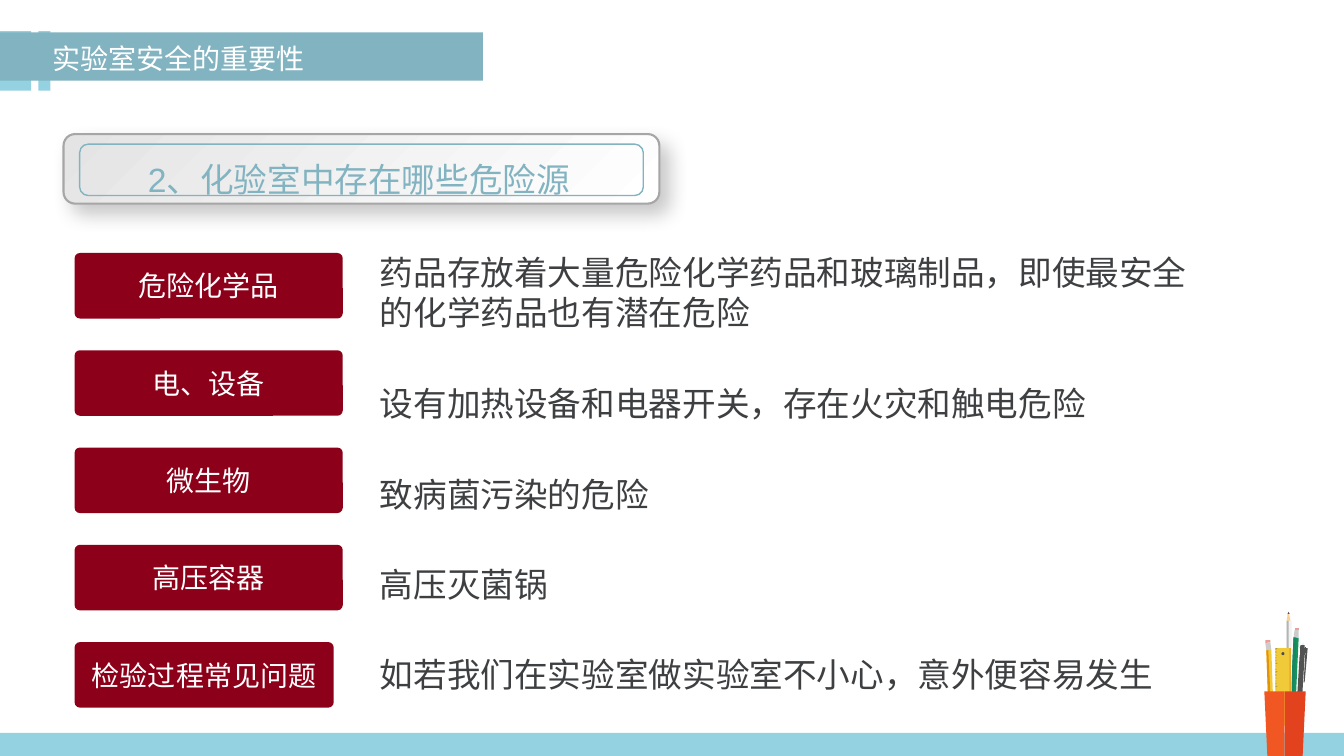
import pptx
import pptx.util
import pptx.dml.color
import pptx.enum.shapes
import pptx.enum.text
import pptx.oxml
import pptx.oxml.ns

Inches = pptx.util.Inches
Pt = pptx.util.Pt
RGBColor = pptx.dml.color.RGBColor
MSO_SHAPE = pptx.enum.shapes.MSO_SHAPE
PP_ALIGN = pptx.enum.text.PP_ALIGN
MSO_ANCHOR = pptx.enum.text.MSO_ANCHOR

SKY = RGBColor(0x94, 0xD2, 0xE1)
TEAL = RGBColor(0x82, 0xB3, 0xC1)
CRIMSON = RGBColor(0x8D, 0x00, 0x1A)
WHITE = RGBColor(0xFF, 0xFF, 0xFF)
INK = RGBColor(0x3D, 0x3F, 0x41)
CARD_GRAY = RGBColor(0xE4, 0xE4, 0xE4)
CARD_EDGE = RGBColor(0xA6, 0xA6, 0xA6)
GREEN = RGBColor(0x13, 0x95, 0x5C)
DARK_GREEN = RGBColor(0x1A, 0x87, 0x63)
YELLOW = RGBColor(0xF1, 0xCA, 0x3A)
AMBER = RGBColor(0xE4, 0x93, 0x07)
WOOD = RGBColor(0xFB, 0xD1, 0x99)
LEAD = RGBColor(0x4D, 0x4D, 0x4D)
PEN = RGBColor(0x52, 0x52, 0x52)
METAL = RGBColor(0xCC, 0xCC, 0xCC)
ERASER = RGBColor(0xED, 0x9D, 0x97)
PALE = RGBColor(0xF2, 0xF2, 0xF2)
SHADE = RGBColor(0xB3, 0xB3, 0xB3)
ORANGE = RGBColor(0xF0, 0x57, 0x22)
RED = RGBColor(0xE2, 0x43, 0x1E)


def add_box(shapes, kind, left, top, width, height, color):
    """Add a preset shape with a plain fill, no line and no shadow; sizes in inches."""
    box = shapes.add_shape(kind, Inches(left), Inches(top), Inches(width), Inches(height))
    box.shadow.inherit = False
    box.line.fill.background()
    box.fill.solid()
    box.fill.fore_color.rgb = color
    return box


def add_polygon(shapes, color, points):
    """Add a closed outline; points are in hundredths of an inch."""
    builder = shapes.build_freeform(*points[0], scale=Inches(0.01))
    builder.add_line_segments(points[1:], close=True)
    polygon = builder.convert_to_shape()
    polygon.shadow.inherit = False
    polygon.line.fill.background()
    polygon.fill.solid()
    polygon.fill.fore_color.rgb = color


presentation = pptx.Presentation()
presentation.slide_width = Inches(13.33)
presentation.slide_height = Inches(7.5)
slide = presentation.slides.add_slide(presentation.slide_layouts[5])

# Bottom strip and pencil cup
add_box(slide.shapes, MSO_SHAPE.RECTANGLE, 0, 7.27, 13.33, 0.23, SKY)
cup = slide.shapes.add_group_shape().shapes

pencil_parts = [
    (GREEN, [(1288, 633), (1284, 719), (1279, 718), (1283, 632)]),
    (DARK_GREEN, [(1283, 632), (1286, 632), (1282, 719), (1279, 718)]),
    (METAL, [(1283, 632), (1288, 633), (1288, 625), (1284, 625)]),
    (ERASER, [(1288, 625), (1284, 625), (1284, 623), (1288, 623)]),
    (YELLOW, [(1261, 645), (1264, 731), (1259, 731), (1256, 645)]),
    (AMBER, [(1256, 645), (1258, 645), (1262, 731), (1259, 731)]),
    (METAL, [(1256, 645), (1261, 645), (1260, 637), (1255, 638)]),
    (ERASER, [(1260, 637), (1255, 638), (1255, 635), (1260, 635)]),
    (WOOD, [(1277, 611), (1276, 616), (1280, 616), (1279, 611), (1279, 609), (1277, 609)]),
    (LEAD, [(1277, 609), (1279, 609), (1278, 607)]),
    (PALE, [(1293, 638), (1293, 643), (1291, 643), (1291, 638)]),
    (PEN, [(1294, 650), (1289, 734), (1284, 734), (1289, 650)]),
    (PEN, [(1289, 650), (1294, 650), (1294, 643), (1289, 643)]),
    (PEN, [(1294, 643), (1289, 643), (1290, 640), (1294, 640)]),
    (PEN, [(1295, 642), (1295, 648), (1294, 648), (1294, 642)]),
    (PEN, [(1297, 643), (1294, 677), (1293, 677), (1295, 643)]),
]
for color, points in pencil_parts:
    add_polygon(cup, color, points)

for left, top, width, height, color in [
    (12.76, 6.16, 0.05, 0.86, PALE),
    (12.76, 6.16, 0.02, 0.86, SHADE),
    (12.65, 6.43, 0.15, 0.77, YELLOW),
    (12.79, 6.43, 0.01, 0.77, AMBER),
]:
    add_box(cup, MSO_SHAPE.RECTANGLE, left, top, width, height, color)
add_box(cup, MSO_SHAPE.OVAL, 12.71, 6.47, 0.03, 0.03, LEAD)

tick_gap = 0.76 / 50
for tick in range(29):
    tick_width = 0.02 if tick % 5 == 0 else 0.01
    mark = add_box(cup, MSO_SHAPE.RECTANGLE, 12.65, 6.43 + tick * tick_gap, tick_width, 0.01, LEAD)
    mark.height = Pt(0.15)

add_polygon(cup, ORANGE, [(1254, 686), (1257, 750), (1274, 750), (1274, 686)])
add_polygon(cup, RED, [(1295, 686), (1274, 686), (1274, 750), (1292, 750)])

# Title band
add_box(slide.shapes, MSO_SHAPE.RECTANGLE, 0, 0.31, 0.31, 0.59, SKY)
add_box(slide.shapes, MSO_SHAPE.RECTANGLE, 0.38, 0.31, 0.12, 0.59, SKY)
band = add_box(slide.shapes, MSO_SHAPE.RECTANGLE, 0, 0.32, 4.79, 0.48, TEAL)
title = slide.shapes.title
title.left, title.top, title.width, title.height = Inches(0.42), Inches(0.32), Inches(3.92), Inches(0.48)
band._element.addnext(title._element)

# Subtitle card
card = add_box(slide.shapes, MSO_SHAPE.ROUNDED_RECTANGLE, 0.63, 1.33, 5.91, 0.69, WHITE)
card.fill.gradient()
card.fill.gradient_angle = 315
for stop, color in zip(card.fill.gradient_stops, (CARD_GRAY, WHITE)):
    stop.color.rgb = color
card.line.color.rgb = CARD_EDGE
card.line.width = Pt(1.5)
effects = card._element.spPr.find(pptx.oxml.ns.qn("a:effectLst"))
effects.append(pptx.oxml.parse_xml(
    f'<a:outerShdw {pptx.oxml.ns.nsdecls("a")} blurRad="{Pt(14)}" dist="{Pt(9)}" dir="2700000" '
    'algn="tl" rotWithShape="0"><a:srgbClr val="000000"><a:alpha val="22000"/></a:srgbClr></a:outerShdw>'))

frame = add_box(slide.shapes, MSO_SHAPE.ROUNDED_RECTANGLE, 0.79, 1.43, 5.59, 0.51, WHITE)
frame.fill.background()
frame.line.color.rgb = TEAL
frame.line.width = Pt(1)

subtitle = slide.shapes.add_textbox(Inches(0.74), Inches(1.37), Inches(5.64), Inches(0.62))
subtitle.text_frame.margin_left = subtitle.text_frame.margin_right = Inches(0.08)
subtitle.text_frame.margin_top = subtitle.text_frame.margin_bottom = Inches(0.04)

# Each entry: shape, text, size, colour, alignment, anchor, line spacing
texts = [
    (title, "实验室安全的重要性", 20, WHITE, PP_ALIGN.JUSTIFY, MSO_ANCHOR.MIDDLE, 1.1),
    (subtitle, "2、化验室中存在哪些危险源", 24, TEAL, PP_ALIGN.CENTER, MSO_ANCHOR.MIDDLE, 1.5),
]

# Hazards: label, label width, description, description top, description height
hazards = [
    ("危险化学品", 2.66, "药品存放着大量危险化学药品和玻璃制品，即使最安全的化学药品也有潜在危险", 2.45, 0.91),
    ("电、设备", 2.66, "设有加热设备和电器开关，存在火灾和触电危险", 3.75, 0.5),
    ("微生物", 2.66, "致病菌污染的危险", 4.65, 0.5),
    ("高压容器", 2.66, "高压灭菌锅", 5.55, 0.5),
    ("检验过程常见问题", 2.57, "如若我们在实验室做实验室不小心，意外便容易发生", 6.44, 0.5),
]
row_gap = (6.37 - 2.51) / 4
for row, (label, label_width, description, top, height) in enumerate(hazards):
    button = add_box(slide.shapes, MSO_SHAPE.ROUNDED_RECTANGLE,
                     0.74, 2.51 + row * row_gap, label_width, 0.65, CRIMSON)
    button.adjustments[0] = 0.08
    texts.append((button, label, 20, WHITE, PP_ALIGN.CENTER, MSO_ANCHOR.MIDDLE, 1.0))
    note = slide.shapes.add_textbox(Inches(3.67), Inches(top), Inches(8.43), Inches(height))
    texts.append((note, description, 24, INK, PP_ALIGN.LEFT, MSO_ANCHOR.TOP, 1.0))

for shape, text, size, color, alignment, anchor, spacing in texts:
    text_frame = shape.text_frame
    text_frame.text = text
    text_frame.word_wrap = True
    text_frame.auto_size = pptx.enum.text.MSO_AUTO_SIZE.NONE
    text_frame.vertical_anchor = anchor
    paragraph = text_frame.paragraphs[0]
    paragraph.alignment = alignment
    paragraph.line_spacing = spacing
    font = paragraph.runs[0].font
    font.name = "Arial"
    font.size = Pt(size)
    font.color.rgb = color

presentation.save("out.pptx")
